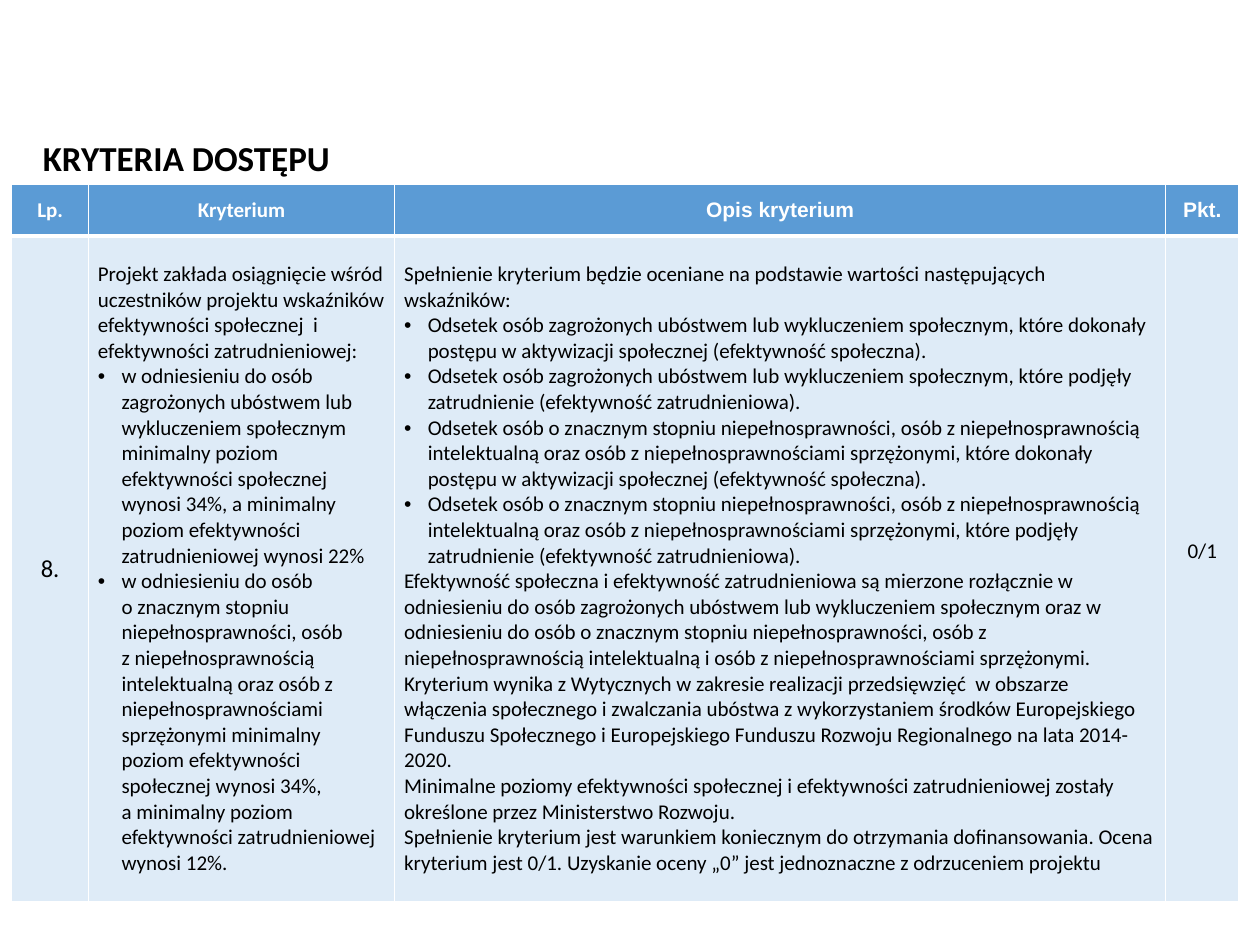
from lxml.etree import SubElement
from pptx import Presentation
from pptx.dml.color import RGBColor
from pptx.enum.text import MSO_ANCHOR, PP_ALIGN
from pptx.oxml.ns import qn
from pptx.util import Pt

COLORS = {"header": "5B9BD5", "body": "DEEBF7", "white": "FFFFFF", "black": "000000"}
COLUMN_WIDTHS = [43.9, 175, 440.6, 41.8]
ROW_HEIGHTS = [29.5, 380.2]
HEADERS = [("Lp.", "Calibri"), ("Kryterium", "Calibri"),
           ("Opis kryterium", "Arial"), ("Pkt.", "Arial")]
CRITERION = [
    ("Projekt zakłada osiągnięcie wśród uczestników projektu wskaźników efektywności "
     "społecznej  i efektywności zatrudnieniowej:", False),
    ("w odniesieniu do osób zagrożonych ubóstwem lub wykluczeniem społecznym minimalny "
     "poziom efektywności społecznej wynosi 34%, a minimalny poziom efektywności "
     "zatrudnieniowej wynosi 22%", True),
    ("w odniesieniu do osób \no znacznym stopniu niepełnosprawności, osób \n"
     "z niepełnosprawnością intelektualną oraz osób z niepełnosprawnościami sprzężonymi "
     "minimalny poziom efektywności społecznej wynosi 34%, \n"
     "a minimalny poziom efektywności zatrudnieniowej wynosi 12%.", True),
]
GROUPS = [
    "Odsetek osób zagrożonych ubóstwem lub wykluczeniem społecznym",
    "Odsetek osób o znacznym stopniu niepełnosprawności, osób z niepełnosprawnością "
    "intelektualną oraz osób z niepełnosprawnościami sprzężonymi",
]
OUTCOMES = [
    "które dokonały postępu w aktywizacji społecznej (efektywność społeczna).",
    "które podjęły zatrudnienie (efektywność zatrudnieniowa).",
]
DESCRIPTION = [
    ("Spełnienie kryterium będzie oceniane na podstawie wartości następujących "
     "wskaźników:", False),
    *[(f"{group}, {outcome}", True) for group in GROUPS for outcome in OUTCOMES],
    ("Efektywność społeczna i efektywność zatrudnieniowa są mierzone rozłącznie w "
     "odniesieniu do osób zagrożonych ubóstwem lub wykluczeniem społecznym oraz w "
     "odniesieniu do osób o znacznym stopniu niepełnosprawności, osób z "
     "niepełnosprawnością intelektualną i osób z niepełnosprawnościami sprzężonymi.", False),
    ("Kryterium wynika z Wytycznych w zakresie realizacji przedsięwzięć  w obszarze "
     "włączenia społecznego i zwalczania ubóstwa z wykorzystaniem środków Europejskiego "
     "Funduszu Społecznego i Europejskiego Funduszu Rozwoju Regionalnego na lata "
     "2014-2020.", False),
    ("Minimalne poziomy efektywności społecznej i efektywności zatrudnieniowej zostały "
     "określone przez Ministerstwo Rozwoju.", False),
    ("Spełnienie kryterium jest warunkiem koniecznym do otrzymania dofinansowania. Ocena "
     "kryterium jest 0/1. Uzyskanie oceny „0” jest jednoznaczne z odrzuceniem projektu", False),
]


def rgb(name):
    return RGBColor.from_string(COLORS[name])


def format_runs(p, size, color, bold=False, font="Calibri"):
    for r in p.runs:
        r.font.name = font
        r.font.size = Pt(size)
        r.font.bold = bold
        r.font.color.rgb = rgb(color)


def add_bullet(p):
    pPr = p._p.get_or_add_pPr()
    pPr.set("marL", str(Pt(13.5)))
    pPr.set("indent", str(-Pt(13.5)))
    SubElement(pPr, qn("a:buFont"), typeface="Arial")
    SubElement(pPr, qn("a:buChar"), char="•")


def style_cell(cell, fill, top, bottom):
    tcPr = cell._tc.get_or_add_tcPr()
    for side, width in (("L", 1), ("R", 1), ("T", top), ("B", bottom)):
        ln = SubElement(tcPr, qn(f"a:ln{side}"), w=str(Pt(width)))
        SubElement(SubElement(ln, qn("a:solidFill")), qn("a:srgbClr"), val=COLORS["white"])
    cell.fill.solid()
    cell.fill.fore_color.rgb = rgb(fill)
    cell.vertical_anchor = MSO_ANCHOR.MIDDLE


def set_label(cell, text, size, color, bold=False, font="Calibri"):
    p = cell.text_frame.paragraphs[0]
    p.text = text
    p.alignment = PP_ALIGN.CENTER
    format_runs(p, size, color, bold, font)


def set_margins(cell, bottom=0):
    cell.margin_left = cell.margin_right = Pt(5.4)
    cell.margin_top = 0
    cell.margin_bottom = Pt(bottom)


def set_paragraphs(cell, items):
    set_margins(cell)
    tf = cell.text_frame
    for i, (text, bulleted) in enumerate(items):
        p = tf.add_paragraph() if i else tf.paragraphs[0]
        p.text = text
        if bulleted:
            add_bullet(p)
        format_runs(p, 12, "black")


def add_title(s):
    title = s.shapes.title
    title.left, title.top, title.width, title.height = Pt(17.3), Pt(74.2), Pt(571.7), Pt(31.7)
    tf = title.text_frame
    tf.text = "KRYTERIA DOSTĘPU"
    tf.word_wrap = True
    tf.vertical_anchor = MSO_ANCHOR.MIDDLE
    p = tf.paragraphs[0]
    p.alignment = PP_ALIGN.LEFT
    format_runs(p, 20, "black", bold=True)


def add_criteria_table(s):
    table = s.shapes.add_table(2, 4, Pt(6.7), Pt(105.4), Pt(sum(COLUMN_WIDTHS)),
                               Pt(sum(ROW_HEIGHTS))).table
    for column, width in zip(table.columns, COLUMN_WIDTHS):
        column.width = Pt(width)
    for row, height in zip(table.rows, ROW_HEIGHTS):
        row.height = Pt(height)
    for i, (text, font) in enumerate(HEADERS):
        style_cell(table.cell(0, i), "header", 1, 3)
        style_cell(table.cell(1, i), "body", 3, 1)
        set_label(table.cell(0, i), text, 12, "white", True, font)
    number, criterion, description, points = table.rows[1].cells
    set_label(number, "8.", 14, "black")
    set_paragraphs(criterion, CRITERION)
    set_paragraphs(description, DESCRIPTION)
    set_label(points, "0/1", 12, "black")
    set_margins(points, bottom=20)


def main():
    prs = Presentation()
    prs.slide_width, prs.slide_height = Pt(720), Pt(540)
    s = prs.slides.add_slide(prs.slide_layouts[5])
    add_title(s)
    add_criteria_table(s)
    prs.save("out.pptx")


if __name__ == "__main__":
    main()
